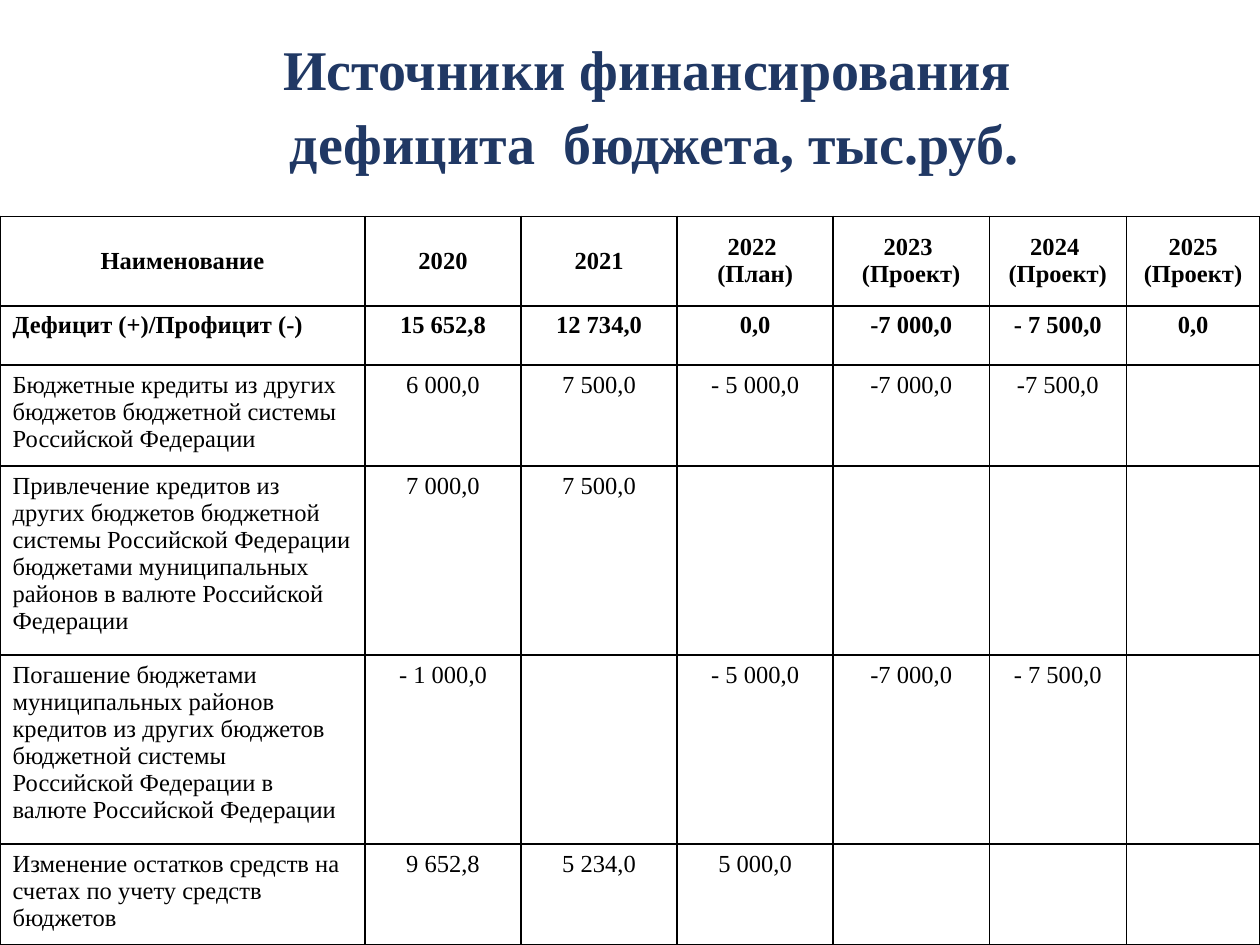
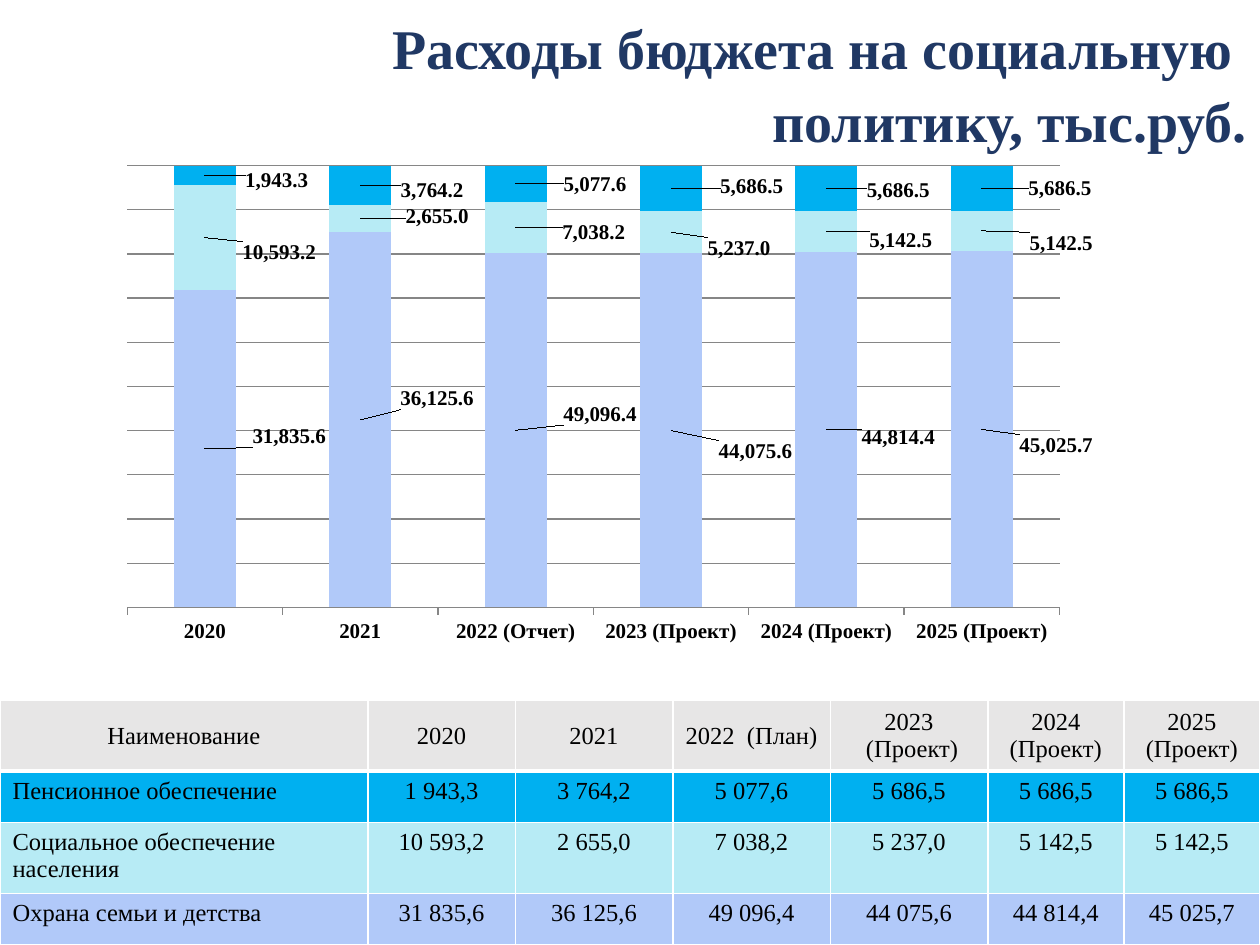
from lxml import etree
from pptx import Presentation
from pptx.chart.data import CategoryChartData
from pptx.dml.color import RGBColor
from pptx.enum.chart import XL_CHART_TYPE, XL_LABEL_POSITION, XL_TICK_LABEL_POSITION, XL_TICK_MARK
from pptx.enum.text import MSO_ANCHOR, MSO_AUTO_SIZE, PP_ALIGN
from pptx.oxml import parse_xml
from pptx.oxml.ns import nsdecls, qn
from pptx.util import Inches, Pt

LEFT, CENTER, RIGHT = PP_ALIGN.LEFT, PP_ALIGN.CENTER, PP_ALIGN.RIGHT
TOP, MIDDLE = MSO_ANCHOR.TOP, MSO_ANCHOR.MIDDLE
STACKED_100 = XL_CHART_TYPE.COLUMN_STACKED_100
LABEL_CENTER = XL_LABEL_POSITION.CENTER
TICK_OUT, AXIS_LOW = XL_TICK_MARK.OUTSIDE, XL_TICK_LABEL_POSITION.LOW

SLIDE_W, SLIDE_H = Inches(10), Inches(7.5)
FONT = "Times New Roman"
NAVY, BLACK, WHITE, GREY, AXIS = "203864", "000000", "FFFFFF", "E7E6E6", "868686"
PENSION, WELFARE, FAMILY = "00B0F0", "B7EBF5", "B1C9F9"
NUMBER = "#,##0.0"

DEFICIT_ROWS = [
    ["Наименование", "2020", "2021", "2022  (План)", "2023 \n(Проект)", "2024  (Проект)",
     "2025 (Проект)"],
    ["Дефицит (+)/Профицит (-)", "15 652,8", "12 734,0", "0,0", "-7 000,0", "- 7 500,0", "0,0"],
    ["Бюджетные кредиты из других бюджетов бюджетной системы Российской Федерации",
     "6 000,0", "7 500,0", "- 5 000,0", "-7 000,0", "-7 500,0", ""],
    ["Привлечение кредитов из других бюджетов бюджетной системы Российской Федерации "
     "бюджетами муниципальных районов в валюте Российской Федерации",
     "7 000,0", "7 500,0", "", "", "", ""],
    ["Погашение бюджетами муниципальных районов кредитов из других бюджетов бюджетной "
     "системы Российской Федерации в валюте Российской Федерации",
     "- 1 000,0", "", "- 5 000,0", "-7 000,0", "- 7 500,0", ""],
    ["Изменение остатков средств на счетах по учету средств бюджетов",
     "9 652,8", "5 234,0", "5 000,0", "", "", ""],
]

SOCIAL_HEADER = ["Наименование", "2020", "2021", "2022  (План)", "2023\n (Проект)",
                 "2024 (Проект)", "2025\n(Проект)"]
CHART_YEARS = ["2020", "2021", "2022 (Отчет)", "2023 (Проект)", "2024 (Проект)", "2025 (Проект)"]
# Name, colour, values, label shifts (right, down) in inches from the segment centre
SOCIAL_SERIES = [
    ("Пенсионное обеспечение", PENSION, [1943.3, 3764.2, 5077.6, 5686.5, 5686.5, 5686.5],
     [(.57, .04), (.57, .04), (.63, 0), (.64, -.02), (.57, .02), (.62, 0)]),
    ("Социальное обеспечение населения", WELFARE, [10593.2, 2655.0, 7038.2, 5237.0, 5142.5, 5142.5],
     [(.59, .12), (.61, -.02), (.62, .04), (.54, .13), (.59, .07), (.63, .1)]),
    ("Охрана семьи и детства", FAMILY, [31835.6, 36125.6, 49096.4, 44075.6, 44814.4, 45025.7],
     [(.67, -.1), (.61, -.17), (.67, -.13), (.67, .17), (.57, .06), (.59, .13)]),
]


def rgb(value):
    return RGBColor.from_string(value)


def place(x, y, w, h):
    """Turn percentages of the slide into left, top, width, height."""
    return (int(SLIDE_W * x / 100), int(SLIDE_H * y / 100),
            int(SLIDE_W * w / 100), int(SLIDE_H * h / 100))


def style_font(font, size, color=BLACK, bold=False, name=FONT):
    font.name, font.size, font.bold = name, Pt(size), bold
    font.color.rgb = rgb(color)


def style_paragraphs(tf, align, size, color=BLACK, bold=False, spacing=None):
    for p in tf.paragraphs:
        p.alignment, p.line_spacing = align, spacing
        style_font(p.font, size, color, bold)
        for r in p.runs:
            style_font(r.font, size, color, bold)


def add_titled_slide(prs, title, box, align):
    s = prs.slides.add_slide(prs.slide_layouts[5])
    sp = s.shapes.title
    sp.left, sp.top, sp.width, sp.height = place(*box)
    tf = sp.text_frame
    tf.text = title
    tf.auto_size, tf.word_wrap, tf.vertical_anchor = MSO_AUTO_SIZE.NONE, True, TOP
    style_paragraphs(tf, align, 32, NAVY, True, 1.1)
    return s


def set_borders(cell, color, bottom):
    for side in "LRTB":
        width = Pt(bottom if side == "B" else 1)
        cell._tc.get_or_add_tcPr().append(parse_xml(
            f'<a:ln{side} {nsdecls("a")} w="{width}"><a:solidFill>'
            f'<a:srgbClr val="{color}"/></a:solidFill></a:ln{side}>'))


def add_budget_table(s, box, rows, columns, heights, fills, border, bold_rows=0, header_rule=1):
    """Columns and heights are parts of the box's width and height."""
    left, top, width, height = place(*box)
    table = s.shapes.add_table(len(rows), len(columns), left, top, width, height).table
    table.first_row = table.horz_banding = False
    for column, part in zip(table.columns, columns):
        column.width = int(width * part / sum(columns))
    for row, part in zip(table.rows, heights):
        row.height = int(height * part / sum(heights))
    for i, texts in enumerate(rows):
        for j, text in enumerate(texts):
            cell = table.cell(i, j)
            set_borders(cell, border, header_rule if i == 0 else 1)
            cell.fill.solid()
            cell.fill.fore_color.rgb = rgb(fills[i])
            cell.vertical_anchor = MIDDLE if i == 0 else TOP
            cell.text_frame.text = text
            style_paragraphs(cell.text_frame, CENTER if i == 0 or j else LEFT, 14,
                             bold=i < bold_rows)


def manual_layout(**values):
    layout = etree.Element(qn("c:layout"))
    manual = etree.SubElement(layout, qn("c:manualLayout"))
    for tag, value in values.items():
        etree.SubElement(manual, qn("c:" + tag)).set("val", str(value))
    return layout


def label_segments(series, shifts, width, height):
    labels = series.data_labels
    labels.show_value = True
    labels.number_format, labels.number_format_is_linked = NUMBER, False
    style_font(labels.font, 12, bold=True)
    for i, (right, down) in enumerate(shifts):
        label = series.points[i].data_label
        style_font(label.font, 12, bold=True)
        label.position = LABEL_CENTER
        idx = labels._element.findall(qn("c:dLbl"))[i].find(qn("c:idx"))
        idx.addnext(manual_layout(x=Inches(right) / width, y=Inches(down) / height))


def add_social_chart(s, box):
    left, top, width, height = place(*box)
    stack = SOCIAL_SERIES[::-1]
    data = CategoryChartData(number_format=NUMBER)
    data.categories = CHART_YEARS
    for name, _, values, _ in stack:
        data.add_series(name, values)
    chart = s.shapes.add_chart(STACKED_100, left, top, width, height, data).chart
    chart.has_legend = chart.has_title = False
    style_font(chart.font, 18, name="Calibri")

    # Plot area
    area = chart._chartSpace.chart.plotArea
    for old in area.findall(qn("c:layout")):
        area.remove(old)
    area.insert(0, manual_layout(layoutTarget="inner", xMode="edge", yMode="edge",
                                 x=.1, y=.01, w=.74, h=.79))
    plot = chart.plots[0]
    plot.gap_width, plot.overlap, plot.vary_by_categories = 150, 100, False

    # Axes
    years, amounts = chart.category_axis, chart.value_axis
    years.major_tick_mark, years.tick_label_position = TICK_OUT, AXIS_LOW
    years.format.line.color.rgb = rgb(AXIS)
    style_font(years.tick_labels.font, 12, bold=True)
    amounts.visible, amounts.has_major_gridlines = False, True
    amounts.minimum_scale, amounts.maximum_scale, amounts.major_unit = 0, 1, .1
    amounts.major_gridlines.format.line.color.rgb = rgb(AXIS)

    # Segments and their labels
    for series, (_, color, _, shifts) in zip(plot.series, stack):
        series.format.fill.solid()
        series.format.fill.fore_color.rgb = rgb(color)
        label_segments(series, shifts, width, height)


def build_deficit_slide(prs):
    s = add_titled_slide(prs, "Источники финансирования \nдефицита  бюджета, тыс.руб.",
                         (5.9, 2.27, 92.1, 15.73), CENTER)
    add_budget_table(s, (0, 22.9, 100, 77.1), DEFICIT_ROWS,
                     [2.9, 1.24, 1.24, 1.24, 1.24, 1.09, 1.06],
                     [.71, .47, .8, 1.5, 1.5, .8], [WHITE] * len(DEFICIT_ROWS), BLACK, bold_rows=2)


def build_social_slide(prs):
    s = add_titled_slide(prs, "Расходы бюджета на социальную \nполитику, тыс.руб.",
                         (0, 0, 100, 15.73), RIGHT)
    rows = [SOCIAL_HEADER]
    for name, _, values, _ in SOCIAL_SERIES:
        rows.append([name] + [f"{v:,.1f}".replace(",", " ").replace(".", ",") for v in values])
    add_budget_table(s, (0, 74.13, 100, 25.87), rows,
                     [2.92, 1.17, 1.25, 1.25, 1.25, 1.08, 1.08], [.56, .41, .56, .41],
                     [GREY, PENSION, WELFARE, FAMILY], WHITE, header_rule=3)
    add_social_chart(s, (.1, 16.93, 100, 59.2))


def main():
    prs = Presentation()
    prs.slide_width, prs.slide_height = SLIDE_W, SLIDE_H
    build_deficit_slide(prs)
    build_social_slide(prs)
    prs.save("out.pptx")


if __name__ == "__main__":
    main()
